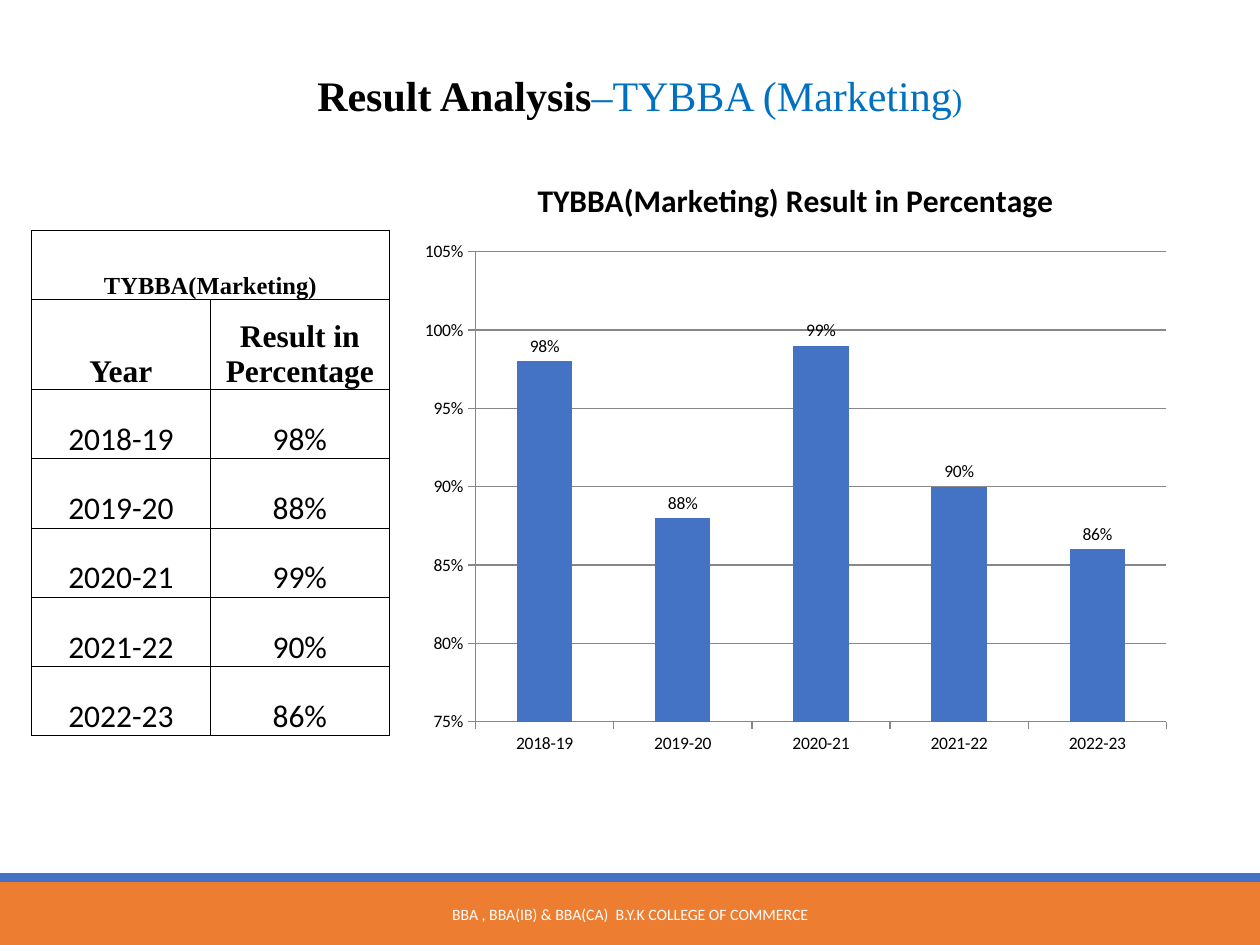
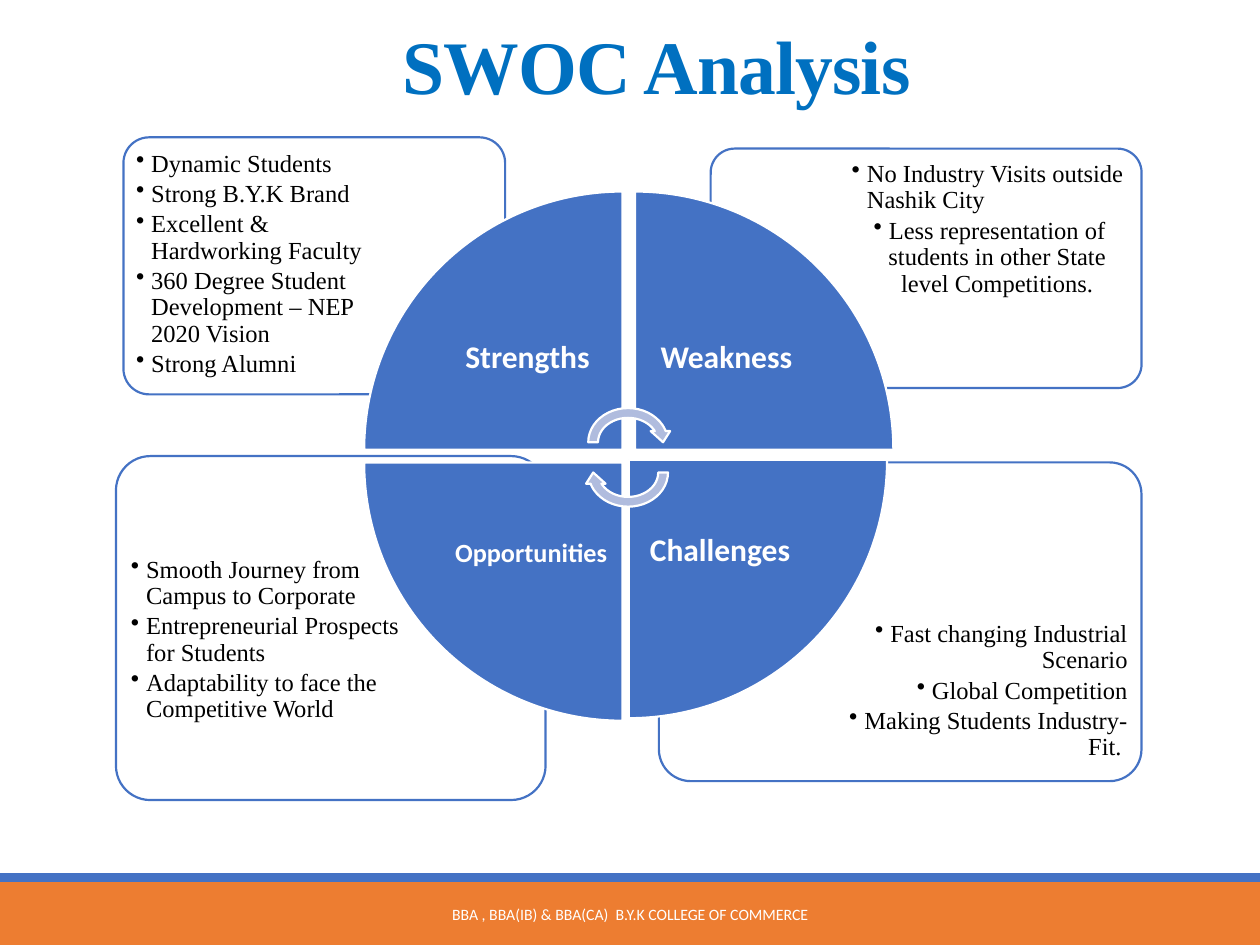
from lxml import etree
from pptx import Presentation
from pptx import util as u
from pptx.chart.data import CategoryChartData
from pptx.dml.color import RGBColor
from pptx.enum import chart as ch
from pptx.enum import shapes, text
from pptx.oxml.ns import qn

WHITE = RGBColor(0xFF, 0xFF, 0xFF)
BLACK = RGBColor(0, 0, 0)
BLUE = RGBColor(0x44, 0x72, 0xC4)
TITLE_BLUE = RGBColor(0x00, 0x70, 0xC0)
ORANGE = RGBColor(0xED, 0x7D, 0x31)
PALE_BLUE = RGBColor(0xB0, 0xBC, 0xDE)
GRID = RGBColor(0x87, 0x87, 0x87)
SANS, SERIF = "Calibri", "Times New Roman"
LEFT, CENTER, RIGHT = text.PP_ALIGN.LEFT, text.PP_ALIGN.CENTER, text.PP_ALIGN.RIGHT
TOP, MIDDLE, BOTTOM = (text.MSO_ANCHOR.TOP, text.MSO_ANCHOR.MIDDLE,
                       text.MSO_ANCHOR.BOTTOM)
SHAPE = shapes.MSO_SHAPE
FOOTER = "BBA , BBA(IB) & BBA(CA)  B.Y.K COLLEGE OF COMMERCE"
SUBJECT = "TYBBA(Marketing)"
RESULTS = {"2018-19": 0.98, "2019-20": 0.88, "2020-21": 0.99,
           "2021-22": 0.9, "2022-23": 0.86}
CARDS = [
    ((5.23, 3.67, 3.83, 2.53), (6.44, 4.87, 2.57, 1.28), [
        ("Fast changing Industrial Scenario", RIGHT),
        ("Global Competition", RIGHT),
        ("Making Students Industry-Fit. ", RIGHT)]),
    ((0.92, 3.62, 3.41, 2.73), (0.98, 4.36, 2.27, 1.92), [
        ("Smooth Journey from Campus to Corporate", LEFT),
        ("Entrepreneurial Prospects for Students", LEFT),
        ("Adaptability to face the Competitive World", LEFT)]),
    ((5.64, 1.18, 3.42, 1.9), (6.7, 1.22, 2.31, 1.34), [
        ("No Industry Visits outside Nashik City", LEFT),
        ("Less representation of students in other State level Competitions.",
         CENTER)]),
    ((0.98, 1.09, 3.03, 2.04), (1.02, 1.14, 2.03, 1.44), [
        ("Dynamic Students", LEFT),
        ("Strong B.Y.K Brand", LEFT),
        ("Excellent & Hardworking Faculty", LEFT),
        ("360 Degree Student Development – NEP 2020 Vision", LEFT),
        ("Strong Alumni", LEFT)]),
]
WEDGES = [("Strengths ", 2.89, 1.52, 18), ("Weakness", 5.04, 1.52, 18),
          ("Challenges", 4.99, 3.65, 18), ("Opportunities ", 2.89, 3.67, 15)]
WEDGE, LABEL = 2.05, 1.45


class Deck:
    """Holds the shared style and the current slide, and draws each element."""

    def __init__(self):
        self.prs = Presentation()
        self.prs.slide_width, self.prs.slide_height = u.Inches(10), u.Inches(7.5)
        self.s = None

    def new_slide(self):
        self.s = self.prs.slides.add_slide(self.prs.slide_layouts[6])
        self.shape(SHAPE.RECTANGLE, (0, 7, 10, 0.5), ORANGE)
        self.shape(SHAPE.RECTANGLE, (0, 6.93, 10, 0.07), BLUE)
        tf = self.textbox((3.02, 7.06, 3.96, 0.4), MIDDLE)
        self.add_words(tf.paragraphs[0], FOOTER, size=9, color=WHITE)

    def style(self, font, **fmt):
        base = {"name": SANS, "size": 18, "bold": False, "color": BLACK}
        for key, value in (base | fmt).items():
            if key == "color":
                font.color.rgb = value
            else:
                setattr(font, key, u.Pt(value) if key == "size" else value)

    def add_words(self, p, words, align=CENTER, **fmt):
        p.alignment = align
        r = p.add_run()
        r.text = words
        self.style(r.font, **fmt)
        return r

    def shape(self, kind, at, fill, line=None, rotation=0):
        sp = self.s.shapes.add_shape(kind, *map(u.Inches, at))
        sp.shadow.inherit = False
        sp.fill.solid()
        sp.fill.fore_color.rgb = fill
        sp.rotation = rotation
        if line is None:
            sp.line.fill.background()
        else:
            sp.line.color.rgb = line
            sp.line.width = u.Pt(1.25)
        return sp

    def textbox(self, at, anchor=TOP, inset=None, wrap=True):
        tf = self.s.shapes.add_textbox(*map(u.Inches, at)).text_frame
        tf.word_wrap = wrap
        tf.vertical_anchor = anchor
        if inset is not None:
            for side in ("left", "top", "right", "bottom"):
                setattr(tf, f"margin_{side}", u.Inches(inset))
        return tf

    def bullets(self, at, items):
        tf = self.textbox(at, inset=0.06)
        for i, (words, align) in enumerate(items):
            p = tf.add_paragraph() if i else tf.paragraphs[0]
            pPr = p._p.get_or_add_pPr()
            pPr.set("marL", str(u.Inches(0.12)))
            pPr.set("indent", str(-u.Inches(0.12)))
            etree.SubElement(pPr, qn("a:buChar")).set("char", "•")
            p.line_spacing = 0.9
            p.space_after = u.Pt(2.1)
            self.add_words(p, words, align, name=SERIF, size=14)

    def cell(self, cell, words, **fmt):
        cell.fill.background()
        cell.vertical_anchor = BOTTOM
        for side in ("left", "top", "right", "bottom"):
            setattr(cell, f"margin_{side}", 0)
        if words:
            self.add_words(cell.text_frame.paragraphs[0], words, **fmt)
        tcPr = cell._tc.get_or_add_tcPr()
        for i, edge in enumerate(("lnL", "lnR", "lnT", "lnB")):
            ln = etree.Element(qn(f"a:{edge}"), w=str(u.Pt(0.5)))
            fill = etree.SubElement(ln, qn("a:solidFill"))
            etree.SubElement(fill, qn("a:srgbClr")).set("val", str(BLACK))
            tcPr.insert(i, ln)

    def table(self, at, rows, heights):
        tbl = self.s.shapes.add_table(len(rows), 2, *map(u.Inches, at)).table
        tbl.first_row = tbl.horz_banding = False
        for col in tbl.columns:
            col.width = u.Inches(at[2] / 2)
        for i, (row, height) in enumerate(zip(rows, heights)):
            tbl.rows[i].height = u.Inches(height)
            head = {"name": SERIF, "bold": True} if i < 2 else {}
            for j, words in enumerate(row):
                self.cell(tbl.cell(i, j), words, size=18 if i else 14, **head)
        tbl.cell(0, 0).merge(tbl.cell(0, 1))

    def chart(self, at, title, results):
        data = CategoryChartData(number_format="0%")
        data.categories = list(results)
        data.add_series(title, list(results.values()))
        chart = self.s.shapes.add_chart(
            ch.XL_CHART_TYPE.COLUMN_CLUSTERED, *map(u.Inches, at), data).chart
        self.style(chart.font, size=10)
        chart.has_legend = False
        chart.has_title = True
        self.add_words(chart.chart_title.text_frame.paragraphs[0], title, bold=True)
        chart.chart_title.include_in_layout = False
        plot = chart.plots[0]
        plot.vary_by_categories = False
        plot.gap_width = 150
        fill = plot.series[0].format.fill
        fill.solid()
        fill.fore_color.rgb = BLUE
        plot.has_data_labels = True
        labels = plot.data_labels
        self.style(labels.font, size=10)
        formats = {"show_value": True, "number_format": "0%",
                   "number_format_is_linked": False,
                   "position": ch.XL_LABEL_POSITION.OUTSIDE_END}
        for key, value in formats.items():
            setattr(labels, key, value)
        axis = chart.value_axis
        scale = {"minimum_scale": 0.75, "maximum_scale": 1.05, "major_unit": 0.05,
                 "has_major_gridlines": True}
        for key, value in scale.items():
            setattr(axis, key, value)
        axis.tick_labels.number_format = "0%"
        axis.tick_labels.number_format_is_linked = False
        for part in (axis, chart.category_axis):
            part.major_tick_mark = ch.XL_TICK_MARK.OUTSIDE
            part.minor_tick_mark = ch.XL_TICK_MARK.NONE
        for part in (axis, chart.category_axis, axis.major_gridlines):
            part.format.line.color.rgb = GRID
            part.format.line.width = u.Pt(0.75)

    def wedge(self, i, label, left, top, size):
        self.shape(SHAPE.PIE_WEDGE, (left, top, WEDGE, WEDGE), BLUE, WHITE, 90 * i)
        shift = WEDGE - LABEL
        x = left + shift if i in (0, 3) else left
        y = top + shift if i < 2 else top
        tf = self.textbox((x, y, LABEL, LABEL), MIDDLE, 0.14 if size == 18 else 0.12)
        tf.paragraphs[0].line_spacing = 0.9
        self.add_words(tf.paragraphs[0], label, size=size, bold=True, color=WHITE)


def result_slide(deck):
    deck.new_slide()
    p = deck.textbox((2.42, 0.5, 5.37, 0.5), wrap=False).paragraphs[0]
    for words, fmt in (("Result Analysis", {"size": 24, "bold": True}),
                       ("–TYBBA (Marketing", {"size": 24, "color": TITLE_BLUE}),
                       (")", {"size": 18, "color": TITLE_BLUE})):
        deck.add_words(p, words, LEFT, name=SERIF, **fmt)
    deck.chart((3.25, 1.22, 6.13, 4.86), f"{SUBJECT} Result in Percentage", RESULTS)
    rows = [(SUBJECT, ""), ("Year", "Result in Percentage")]
    rows += [(year, f"{value:.0%}") for year, value in RESULTS.items()]
    deck.table((0.25, 1.83, 2.84, 4), rows, [0.55, 0.71] + [0.55] * len(RESULTS))


def swoc_slide(deck):
    deck.new_slide()
    p = deck.textbox((2.25, 0.3, 5.92, 0.62), BOTTOM).paragraphs[0]
    p.line_spacing = 0.85
    r = deck.add_words(p, "SWOC Analysis", name=SERIF, size=43.2, bold=True,
                       color=TITLE_BLUE)
    r._r.get_or_add_rPr().set("spc", "-50")
    for frame, body, items in CARDS:
        deck.shape(SHAPE.ROUNDED_RECTANGLE, frame, WHITE, BLUE).adjustments[0] = 0.1
        deck.bullets(body, items)
    for i, wedge in enumerate(WEDGES):
        deck.wedge(i, *wedge)
    for top, turn in ((3.2, 0), (3.44, 180)):
        deck.shape(SHAPE.CIRCULAR_ARROW, (4.63, top, 0.71, 0.62), PALE_BLUE, WHITE, turn)


def main():
    deck = Deck()
    result_slide(deck)
    swoc_slide(deck)
    deck.prs.save("out.pptx")


if __name__ == "__main__":
    main()
